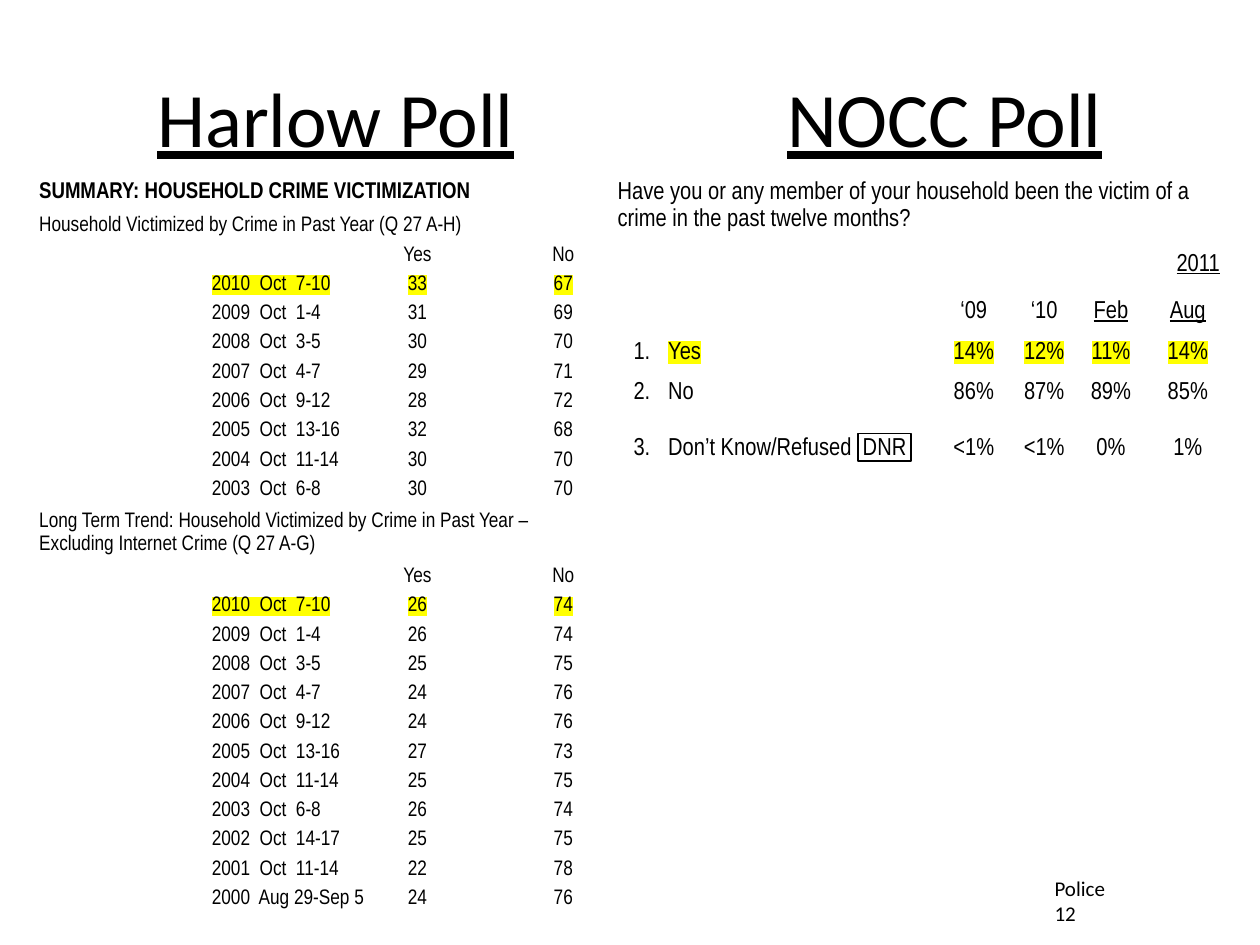
from lxml import etree
from pptx import Presentation
from pptx import util as u
from pptx.dml.color import RGBColor
from pptx.enum import shapes, text
from pptx.oxml import ns

BLACK = RGBColor(0x00, 0x00, 0x00)
YELLOW = RGBColor(0xFF, 0xFF, 0x00)
LEFT, CENTER, RIGHT = text.PP_ALIGN.LEFT, text.PP_ALIGN.CENTER, text.PP_ALIGN.RIGHT
NARROW, PLAIN = "Arial Narrow", "Calibri"

# Content
TITLE = "Harlow Poll\tNOCC Poll"
FOOTER = "Police\t12"
SUMMARY = "SUMMARY: HOUSEHOLD CRIME VICTIMIZATION"
TRENDS = [
    ("Household Victimized by Crime in Past Year (Q 27 A-H)", 0.59, [
        ("2010  Oct  7-10", 33, 67), ("2009  Oct  1-4", 31, 69),
        ("2008  Oct  3-5", 30, 70), ("2007  Oct  4-7", 29, 71),
        ("2006  Oct  9-12", 28, 72), ("2005  Oct  13-16", 32, 68),
        ("2004  Oct  11-14", 30, 70), ("2003  Oct  6-8", 30, 70),
    ]),
    ("Long Term Trend: Household Victimized by Crime in Past Year – "
     "Excluding Internet Crime (Q 27 A-G)", 1.15, [
         ("2010  Oct  7-10", 26, 74), ("2009  Oct  1-4", 26, 74),
         ("2008  Oct  3-5", 25, 75), ("2007  Oct  4-7", 24, 76),
         ("2006  Oct  9-12", 24, 76), ("2005  Oct  13-16", 27, 73),
         ("2004  Oct  11-14", 25, 75), ("2003  Oct  6-8", 26, 74),
         ("2002  Oct  14-17", 25, 75), ("2001  Oct  11-14", 22, 78),
         ("2000  Aug 29-Sep 5", 24, 76),
     ]),
]
QUESTION = ("Have you or any member of your household been the victim of a "
            "crime in the past twelve months?")
YEAR = "2011"
PERIODS = ["‘09", "‘10", "Feb", "Aug"]
ANSWERS = [
    ("1.", "Yes", "14%", "12%", "11%", "14%"),
    ("2.", "No", "86%", "87%", "89%", "85%"),
    ("3.", "Don’t Know/Refused  DNR", "<1%", "<1%", "0%", "1%"),
]

# Layout in centimetres
TREND_COLUMNS = [3.48, 3.48, 1.63, 1.63, 0.99]
ANSWER_COLUMNS = [1.02, 5.54, 1.6, 1.24, 1.45, 1.65]
ANSWER_ROWS = [1.45, 0.81, 0.81, 0.81, 0.81, 1.45]
ROW = 0.59
TABLE_TOP = 3.6


def write(paragraph, words, size=12, font=NARROW, align=LEFT, bold=False,
          underline=False, highlight=None, spacing=None):
    paragraph.alignment = align
    paragraph.line_spacing = spacing
    run = paragraph.add_run()
    run.text = str(words)
    run.font.size, run.font.name = u.Pt(size), font
    run.font.bold, run.font.underline = bold, underline
    run.font.color.rgb = BLACK
    if highlight:
        mark = etree.Element(ns.qn("a:highlight"))
        etree.SubElement(mark, ns.qn("a:srgbClr"), val=str(highlight))
        run.font._element.find(ns.qn("a:solidFill")).addnext(mark)


def write_cell(table, row, column, words, **style):
    write(table.cell(row, column).text_frame.paragraphs[0], words,
          spacing=1.15, **style)


def merge(table, row, column, last_row, last_column):
    table.cell(row, column).merge(table.cell(last_row, last_column))


def add_table(slide, left, columns, rows, inset, size):
    frame = slide.shapes.add_table(
        len(rows), len(columns), u.Cm(left), u.Cm(TABLE_TOP),
        u.Cm(sum(columns)), u.Cm(sum(rows)))
    table = frame.table
    table.first_row = table.horz_banding = False
    for column, width in zip(table.columns, columns):
        column.width = u.Cm(width)
    for row, height in zip(table.rows, rows):
        row.height = u.Cm(height)
    for cell in table.iter_cells():
        cell.fill.background()
        cell.margin_left = cell.margin_right = u.Cm(inset)
        cell.margin_top = cell.margin_bottom = 0
        cell.vertical_anchor = text.MSO_ANCHOR.MIDDLE
        # Empty cells need a small text size to keep the row low
        end = etree.SubElement(cell.text_frame.paragraphs[0]._p, ns.qn("a:endParaRPr"))
        end.set("sz", str(size * 100))
    return table


def add_tabbed_line(slide, box, inset, tab, words, **style):
    shape = slide.shapes.add_textbox(*map(u.Cm, box))
    frame = shape.text_frame
    frame.word_wrap = True
    frame.vertical_anchor = text.MSO_ANCHOR.MIDDLE
    frame.margin_left = u.Cm(inset)
    paragraph = frame.paragraphs[0]
    write(paragraph, words, font=PLAIN, **style)
    stops = etree.SubElement(paragraph._p.get_or_add_pPr(), ns.qn("a:tabLst"))
    etree.SubElement(stops, ns.qn("a:tab"), pos=str(u.Cm(tab)), algn="l")


def add_trend_table(slide):
    heights = [0.64]
    for _, height, records in TRENDS:
        heights += [height] + [ROW] * (len(records) + 1)
    table = add_table(slide, 0.64, TREND_COLUMNS, heights, 0.15, 12)
    merge(table, 0, 0, 0, 4)
    table.cell(0, 0).vertical_anchor = text.MSO_ANCHOR.TOP
    write_cell(table, 0, 0, SUMMARY, size=13, bold=True)
    row = 1
    for heading, _, records in TRENDS:
        merge(table, row, 0, row, 4)
        write_cell(table, row, 0, heading)
        merge(table, row + 1, 0, row + 1, 1)
        write_cell(table, row + 1, 2, "Yes", align=CENTER)
        write_cell(table, row + 1, 4, "No", align=CENTER)
        first = row + 2
        row = first + len(records)
        merge(table, first, 0, row - 1, 0)
        for index, (date, yes, no) in enumerate(records):
            mark = YELLOW if index == 0 else None
            for column, value, align in ((1, date, LEFT), (2, yes, CENTER), (4, no, CENTER)):
                write_cell(table, first + index, column, value,
                           align=align, highlight=mark)


def add_answer_table(slide):
    table = add_table(slide, 12.27, ANSWER_COLUMNS, ANSWER_ROWS, 0.18, 14)
    for row, words, align in ((0, QUESTION, LEFT), (1, YEAR, RIGHT)):
        merge(table, row, 0, row, 5)
        table.cell(row, 0).vertical_anchor = text.MSO_ANCHOR.TOP
        write_cell(table, row, 0, words, size=14, align=align, underline=words == YEAR)
    merge(table, 2, 0, 2, 1)
    for column, period in enumerate(PERIODS, 2):
        write_cell(table, 2, column, period, size=14, align=CENTER,
                   underline=period in ("Feb", "Aug"))
    aligns = [RIGHT, LEFT] + [CENTER] * len(PERIODS)
    for row, answer in enumerate(ANSWERS, 3):
        for column, (value, align) in enumerate(zip(answer, aligns)):
            mark = YELLOW if row == 3 and column > 0 else None
            write_cell(table, row, column, value, size=14, align=align, highlight=mark)


def main():
    presentation = Presentation()
    presentation.slide_width, presentation.slide_height = u.Cm(25.4), u.Cm(19.05)
    slide = presentation.slides.add_slide(presentation.slide_layouts[6])

    # Title over both polls, with one underline across the gap
    add_tabbed_line(slide, (1.27, 0.76, 22.86, 3.18), 1.9, 12.7, TITLE,
                    size=44, underline=True)
    add_answer_table(slide)

    # Frame around DNR
    frame = slide.shapes.add_shape(shapes.MSO_SHAPE.RECTANGLE,
                                   u.Cm(17.3), u.Cm(8.74), u.Cm(1.07), u.Cm(0.56))
    frame.shadow.inherit = False
    frame.fill.background()
    frame.line.color.rgb = BLACK
    frame.line.width = u.Pt(1)

    add_trend_table(slide)

    # Footer with page number
    add_tabbed_line(slide, (18.21, 17.65, 5.92, 1.02), 3.05, 2.2, FOOTER)
    presentation.save("out.pptx")


if __name__ == "__main__":
    main()
